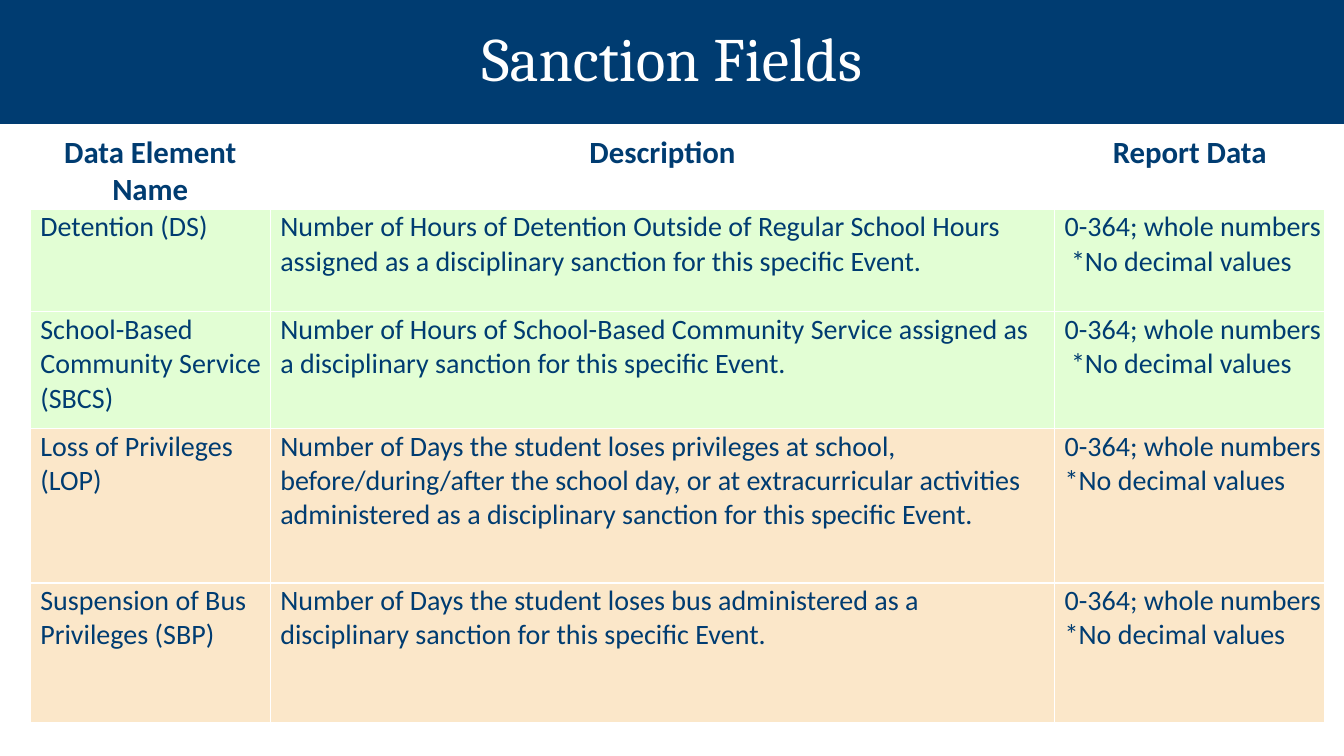
import dataclasses

import lxml.etree
import pptx
import pptx.dml.color
import pptx.enum.text
import pptx.oxml.ns
import pptx.util


@dataclasses.dataclass(frozen=True)
class Theme:
    navy: str = "003C71"
    white: str = "FFFFFF"
    green: str = "E2FED4"
    sand: str = "FBE7C9"
    title_font: str = "Cambria"
    body_font: str = "Calibri"
    title_size: int = 44
    header_size: int = 22
    body_size: int = 20
    border_width: int = 1


THEME = Theme()
SLIDE_WIDTH, SLIDE_HEIGHT = 13.33, 7.5
TITLE_BOX = (0, 0, SLIDE_WIDTH, 1.23)
TABLE_BOX = (0.3, 1.32, 12.84, 5.83)
COLUMN_WIDTHS = (2.38, 7.78, 2.68)
ROW_HEIGHTS = (0.73, 1.02, 1.16, 1.53, 1.39)

HEADERS = ("Data Element Name", "Description", "Report Data")
RANGE = "0-364; whole numbers"
# Each row: fill, then one tuple of paragraphs per column
SANCTIONS = (
    (THEME.green, (
        ("Detention (DS)",),
        ("Number of Hours of Detention Outside of Regular School Hours "
         "assigned as a disciplinary sanction for this specific Event.",),
        (RANGE, " *No decimal values"))),
    (THEME.green, (
        ("School-Based Community Service (SBCS)",),
        ("Number of Hours of School-Based Community Service assigned as",
         "a disciplinary sanction for this specific Event."),
        (RANGE, " *No decimal values"))),
    (THEME.sand, (
        ("Loss of Privileges (LOP)",),
        ("Number of Days the student loses privileges at school, "
         "before/during/after the school day, or at extracurricular activities "
         "administered as a disciplinary sanction for this specific Event.",),
        (RANGE, "*No decimal values"))),
    (THEME.sand, (
        ("Suspension of Bus Privileges (SBP)",),
        ("Number of Days the student loses bus administered as a "
         "disciplinary sanction for this specific Event.",),
        (RANGE, "*No decimal values"))),
)


def color(value):
    return pptx.dml.color.RGBColor.from_string(value)


def inches(values):
    return [pptx.util.Inches(value) for value in values]


def write_paragraphs(frame, lines, font_name, size, text_color, bold, alignment):
    for index, line in enumerate(lines):
        paragraph = frame.paragraphs[0] if index == 0 else frame.add_paragraph()
        paragraph.alignment = alignment
        run = paragraph.add_run()
        run.text = line
        run.font.name = font_name
        run.font.size = pptx.util.Pt(size)
        run.font.bold = bold
        run.font.color.rgb = color(text_color)


def add_borders(cell):
    """Draw all four sides; the lines come before the fill in the cell XML."""
    properties = cell._tc.get_or_add_tcPr()
    for index, side in enumerate(("a:lnL", "a:lnR", "a:lnT", "a:lnB")):
        line = lxml.etree.Element(pptx.oxml.ns.qn(side))
        line.set("w", str(pptx.util.Pt(THEME.border_width)))
        fill = lxml.etree.SubElement(line, pptx.oxml.ns.qn("a:solidFill"))
        lxml.etree.SubElement(fill, pptx.oxml.ns.qn("a:srgbClr")).set("val", THEME.white)
        properties.insert(index, line)


def format_cell(cell, lines, fill=None):
    """A cell without a fill is a header cell."""
    is_header = fill is None
    if is_header:
        cell.fill.background()
    else:
        cell.fill.solid()
        cell.fill.fore_color.rgb = color(fill)
    cell.margin_left = pptx.util.Inches(0.01 if is_header else 0.1)
    cell.margin_right = cell.margin_top = pptx.util.Inches(0.01)
    cell.margin_bottom = 0
    alignment = pptx.enum.text.PP_ALIGN.CENTER if is_header else pptx.enum.text.PP_ALIGN.LEFT
    write_paragraphs(cell.text_frame, lines, THEME.body_font,
                     THEME.header_size if is_header else THEME.body_size,
                     THEME.navy, is_header, alignment)
    add_borders(cell)


def place_title(slide, box):
    title = slide.shapes.title
    title.left, title.top, title.width, title.height = inches(box)
    title.fill.solid()
    title.fill.fore_color.rgb = color(THEME.navy)
    frame = title.text_frame
    frame.vertical_anchor = pptx.enum.text.MSO_ANCHOR.MIDDLE
    write_paragraphs(frame, ("Sanction Fields",), THEME.title_font, THEME.title_size,
                     THEME.white, False, pptx.enum.text.PP_ALIGN.CENTER)
    frame.paragraphs[0].line_spacing = 0.9


def place_sanction_table(slide, box):
    table = slide.shapes.add_table(len(ROW_HEIGHTS), len(COLUMN_WIDTHS), *inches(box)).table
    table.first_row = True
    table.horz_banding = False
    # Column and row shares of the box
    for column, share in zip(table.columns, COLUMN_WIDTHS):
        column.width = pptx.util.Inches(box[2] * share / sum(COLUMN_WIDTHS))
    for row, share in zip(table.rows, ROW_HEIGHTS):
        row.height = pptx.util.Inches(box[3] * share / sum(ROW_HEIGHTS))
    # Header row
    for column, header in enumerate(HEADERS):
        format_cell(table.cell(0, column), (header,))
    # Sanction rows
    for row, (fill, cells) in enumerate(SANCTIONS, start=1):
        for column, lines in enumerate(cells):
            format_cell(table.cell(row, column), lines, fill)


def main():
    presentation = pptx.Presentation()
    presentation.slide_width, presentation.slide_height = inches((SLIDE_WIDTH, SLIDE_HEIGHT))
    slide = presentation.slides.add_slide(presentation.slide_layouts.get_by_name("Title Only"))
    place_title(slide, TITLE_BOX)
    place_sanction_table(slide, TABLE_BOX)
    presentation.save("out.pptx")


if __name__ == "__main__":
    main()
